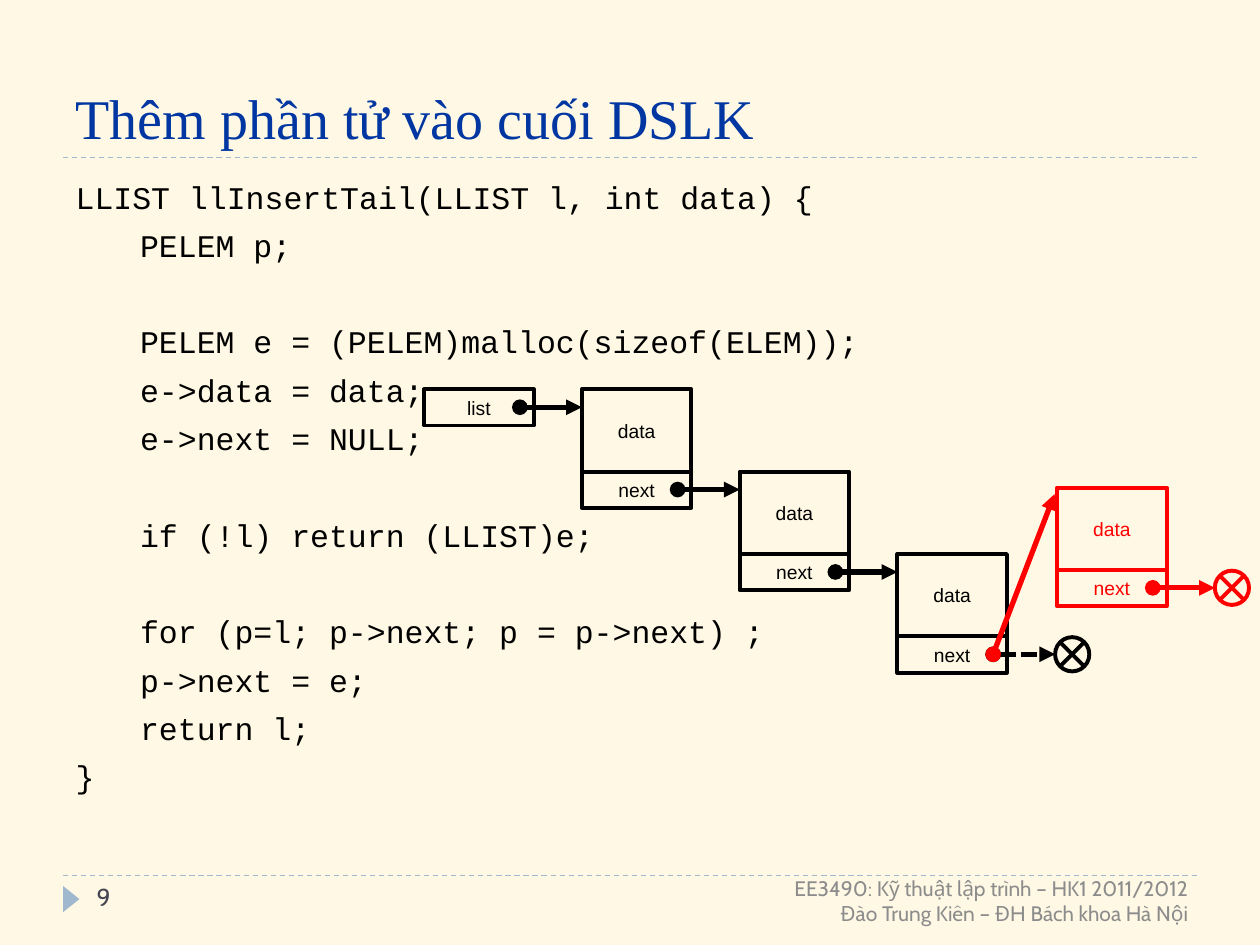
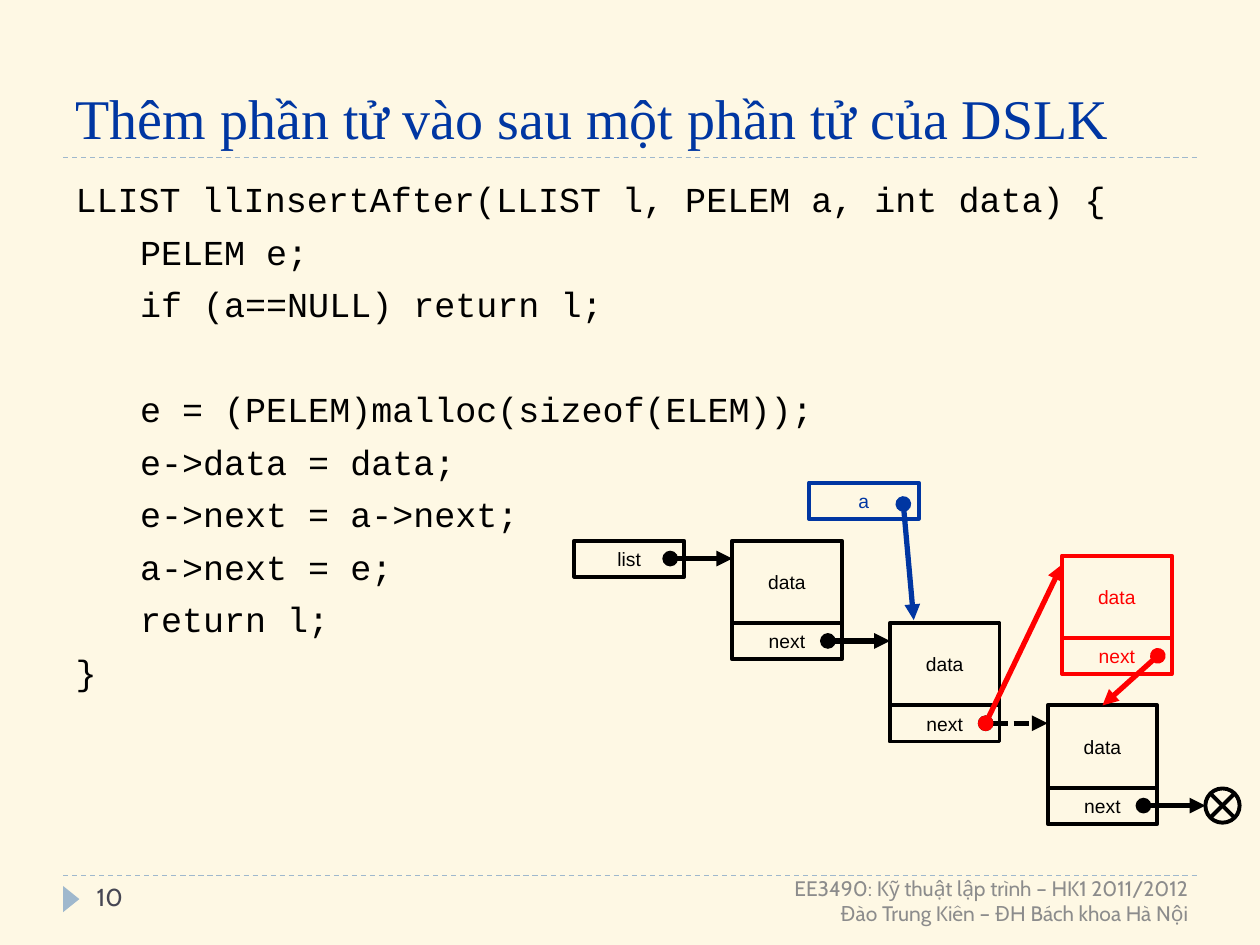
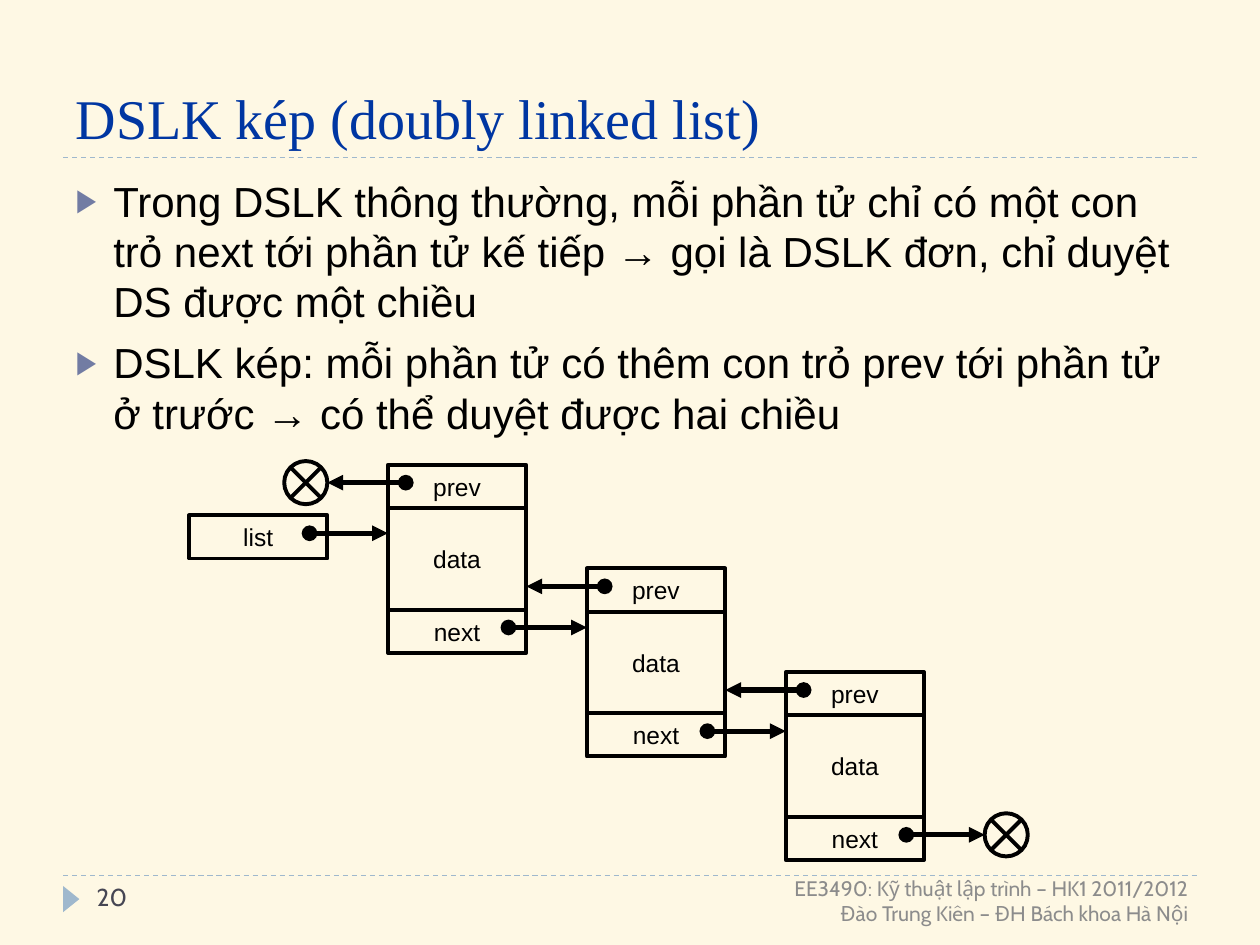
from dataclasses import dataclass

from pptx import Presentation
from pptx.dml.color import RGBColor
from pptx.enum.dml import MSO_LINE
from pptx.enum.shapes import MSO_CONNECTOR, MSO_SHAPE as Shape
from pptx.enum.text import MSO_ANCHOR as Anchor, MSO_AUTO_SIZE as AutoSize, PP_ALIGN as Align
from pptx.oxml.ns import qn
from pptx.util import Cm, Pt
from lxml.etree import SubElement

CREAM, BLUE, PALE_BLUE, BULLET = "FEF8E4", "0036A2", "9FB8CD", "727CA3"
BLACK, RED, NUMBER_GRAY, FOOTER_GRAY = "000000", "FF0000", "464653", "8C8C8C"

TITLE_AREA = (1.27, 0.43, 22.86, 2.74)
BODY_AREA = (1.27, 3.38, 22.86, 13.72)
NUMBER_AREA = (1.7, 17.65, 5.51, 1.02)
FOOTER_AREA = (8.69, 17.65, 15.52, 1.02)
RULE_LEFT, RULE_RIGHT, RULE_HEIGHTS = 1.27, 24.13, (17.65, 3.18)
PARAGRAPH_GAP, LINE_RATIO, CODE_INDENT, BULLET_INDENT = 6, 1.2, 1.3, 0.76
DOT_DEPTH = 0.36

FOOTER = ["EE3490: Kỹ thuật lập trình – HK1 2011/2012",
          "Đào Trung Kiên – ĐH Bách khoa Hà Nội"]

INSERT_TAIL = """LLIST llInsertTail(LLIST l, int data) {
    PELEM p;

    PELEM e = (PELEM)malloc(sizeof(ELEM));
    e->data = data;
    e->next = NULL;

    if (!l) return (LLIST)e;

    for (p=l; p->next; p = p->next) ;
    p->next = e;
    return l;
}"""

INSERT_AFTER = """LLIST llInsertAfter(LLIST l, PELEM a, int data) {
    PELEM e;
    if (a==NULL) return l;

    e = (PELEM)malloc(sizeof(ELEM));
    e->data = data;
    e->next = a->next;
    a->next = e;
    return l;
}"""

DOUBLY_LINKED = [
    "Trong DSLK thông thường, mỗi phần tử chỉ có một con trỏ next tới phần tử kế tiếp "
    "→ gọi là DSLK đơn, chỉ duyệt DS được một chiều",
    "DSLK kép: mỗi phần tử có thêm con trỏ prev tới phần tử ở trước "
    "→ có thể duyệt được hai chiều",
]


@dataclass
class NodeStyle:
    """Sizes of a list node and the steps between nodes, in centimetres."""
    width: float
    data_height: float
    link_height: float
    step_x: float
    step_y: float
    dot_inset: float
    null_size: float
    text_size: int


SINGLE = NodeStyle(2.21, 1.66, 0.73, 3.18, 1.66, 0.28, 0.69, 11)
DOUBLE = NodeStyle(2.79, 2.05, 0.87, 4.01, 2.09, 0.36, 0.87, 14)


def color(hex_value):
    return RGBColor.from_string(hex_value)


def place(shape, area):
    shape.left, shape.top, shape.width, shape.height = map(Cm, area)


def format_runs(paragraph, font_name, size, hex_value):
    for run in paragraph.runs:
        run.font.name, run.font.size = font_name, Pt(size)
        run.font.color.rgb = color(hex_value)


def write_lines(frame, lines, font_name, size, hex_value, align=Align.LEFT):
    frame.word_wrap = True
    frame.text = "\n".join(lines)
    for paragraph in frame.paragraphs:
        paragraph.alignment = align
        format_runs(paragraph, font_name, size, hex_value)


def set_indent(paragraph, margin, first_line):
    properties = paragraph._p.get_or_add_pPr()
    properties.set("marL", str(Cm(margin)))
    properties.set("indent", str(Cm(first_line)))
    return properties


def add_line(slide, start, end, hex_value, width, dash=None):
    line = slide.shapes.add_connector(MSO_CONNECTOR.STRAIGHT, *map(Cm, (*start, *end)))
    line.line.color.rgb = color(hex_value)
    line.line.width = Pt(width)
    if dash:
        line.line.dash_style = dash
    SubElement(line._element.spPr, qn("a:effectLst"))
    return line


def add_pointer(slide, start, end, hex_value=BLACK, dash=None):
    """Draw an arrow that starts with a dot."""
    pointer = add_line(slide, start, end, hex_value, 3, dash)
    outline = pointer._element.spPr.find(qn("a:ln"))
    SubElement(outline, qn("a:headEnd"), type="oval")
    SubElement(outline, qn("a:tailEnd"), type="triangle")
    return pointer


def add_outline(slide, kind, area, hex_value):
    shape = slide.shapes.add_shape(kind, *map(Cm, area))
    shape.shadow.inherit = False
    shape.fill.background()
    shape.line.color.rgb = color(hex_value)
    shape.line.width = Pt(2.25)
    return shape


def add_cell(slide, label, area, style, hex_value=BLACK):
    cell = add_outline(slide, Shape.RECTANGLE, area, hex_value)
    frame = cell.text_frame
    frame.margin_left = frame.margin_right = frame.margin_top = frame.margin_bottom = 0
    frame.vertical_anchor = Anchor.MIDDLE
    write_lines(frame, [label], "Arial", style.text_size, hex_value, Align.CENTER)
    return cell


def add_null(slide, left, middle, style, hex_value=BLACK):
    size = style.null_size
    add_outline(slide, Shape.FLOWCHART_SUMMING_JUNCTION,
                (left, middle - size / 2, size, size), hex_value)


def add_node(slide, left, top, style, hex_value=BLACK):
    """Draw a data cell above a next cell; return the data cell and the dot position."""
    link_top = top + style.data_height
    data = add_cell(slide, "data", (left, top, style.width, style.data_height), style, hex_value)
    add_cell(slide, "next", (left, link_top, style.width, style.link_height), style, hex_value)
    return data, (left + style.width - style.dot_inset, link_top + DOT_DEPTH)


def add_list(slide, left, top, style, head_drop=0, dashed=None, null_end=True):
    """Draw the list head and three nodes in steps; return each (data cell, dot)."""
    head_left, head_top = left - style.step_x, top + head_drop
    add_cell(slide, "list", (head_left, head_top, style.width, style.link_height), style)
    head_y = head_top + DOT_DEPTH
    add_pointer(slide, (left - style.step_x + style.width - style.dot_inset, head_y),
                (left, head_y))
    nodes = []
    for index in range(3):
        node_left = left + index * style.step_x
        data, dot = add_node(slide, node_left, top + index * style.step_y, style)
        dash = MSO_LINE.SQUARE_DOT if index == dashed else None
        add_pointer(slide, dot, (node_left + style.step_x, dot[1]), dash=dash)
        nodes.append((data, dot))
    if null_end:
        add_null(slide, left + 3 * style.step_x, nodes[-1][1][1], style)
    return nodes


def draw_insert_tail(slide):
    nodes = add_list(slide, 11.73, 7.85, SINGLE, dashed=2)
    new_left, new_top = 21.31, 9.83
    _, new_dot = add_node(slide, new_left, new_top, SINGLE, RED)
    null_left = new_left + SINGLE.step_x
    add_pointer(slide, new_dot, (null_left, new_dot[1]), RED)
    add_null(slide, null_left, new_dot[1], SINGLE, RED)
    add_pointer(slide, nodes[2][1], (new_left - 0.05, new_top + 0.13), RED)


def draw_insert_after(slide):
    nodes = add_list(slide, 14.76, 10.9, SINGLE, dashed=1)
    add_cell(slide, "a", (16.31, 9.73, SINGLE.width, SINGLE.link_height), SINGLE, BLUE)
    add_pointer(slide, (18.21, 10.16), (18.42, 12.5), BLUE)
    new_left, new_top = 21.41, 11.2
    _, new_dot = add_node(slide, new_left, new_top, SINGLE, RED)
    to_next = add_pointer(slide, new_dot, (22.23, 14.17), RED)
    to_next.end_connect(nodes[2][0], 0)
    add_pointer(slide, nodes[1][1], (new_left, new_top + 0.18), RED)


def draw_doubly_linked(slide):
    left, top = 7.82, 10.24
    style = DOUBLE
    add_list(slide, left, top, style, head_drop=0.15)
    gap = style.step_x - style.width
    for index in range(3):
        node_left = left + index * style.step_x
        prev_top = top + index * style.step_y - style.link_height
        add_cell(slide, "prev", (node_left, prev_top, style.width, style.link_height), style)
        prev_y = prev_top + DOT_DEPTH
        add_pointer(slide, (node_left + style.dot_inset, prev_y), (node_left - gap, prev_y))
    add_null(slide, left - gap - style.null_size,
             top - style.link_height + DOT_DEPTH, style)


def write_code(frame, code, size):
    """Write code lines; an empty line becomes extra space before the next one."""
    lines = code.split("\n")
    frame.margin_top = Cm(0.2)
    write_lines(frame, [line.strip() for line in lines if line], "Courier New", size, BLACK)
    paragraphs = iter(frame.paragraphs)
    line_height = size * LINE_RATIO
    space = 0
    for line in lines:
        if not line:
            space += line_height + PARAGRAPH_GAP
            continue
        paragraph = next(paragraphs)
        properties = set_indent(paragraph, 0, CODE_INDENT if line.startswith(" ") else 0)
        SubElement(properties, qn("a:buNone"))
        paragraph.line_spacing = Pt(line_height)
        paragraph.space_before = Pt(space)
        space = PARAGRAPH_GAP


def write_bullets(frame, items, size):
    frame.margin_top = Cm(0.15)
    write_lines(frame, items, "Arial", size, BLACK)
    for index, paragraph in enumerate(frame.paragraphs):
        properties = set_indent(paragraph, BULLET_INDENT, -BULLET_INDENT)
        bullet_color = SubElement(properties, qn("a:buClr"))
        SubElement(bullet_color, qn("a:srgbClr"), val=BULLET)
        SubElement(properties, qn("a:buSzPct"), val="76000")
        SubElement(properties, qn("a:buFont"), typeface="Arial")
        SubElement(properties, qn("a:buChar"), char="▶")
        paragraph.line_spacing = Pt(size * LINE_RATIO)
        paragraph.space_before = Pt(PARAGRAPH_GAP if index else 0)


def add_text(slide, area, lines, size, hex_value, align, anchor):
    frame = slide.shapes.add_textbox(*map(Cm, area)).text_frame
    frame.vertical_anchor = anchor
    write_lines(frame, lines, "Cabin", size, hex_value, align)


def add_frame_marks(slide, number):
    """Draw the rules, the page marker, the page number and the footer."""
    for height in RULE_HEIGHTS:
        add_line(slide, (RULE_LEFT, height), (RULE_RIGHT, height), PALE_BLUE, 0.75, MSO_LINE.DASH)
    marker = slide.shapes.add_shape(Shape.ISOSCELES_TRIANGLE, *map(Cm, (1.17, 17.96, 0.53, 0.33)))
    marker.rotation = 90
    marker.shadow.inherit = False
    marker.fill.solid()
    marker.fill.fore_color.rgb = color(PALE_BLUE)
    marker.line.fill.background()
    add_text(slide, NUMBER_AREA, [str(number)], 14, NUMBER_GRAY, Align.LEFT, Anchor.TOP)
    add_text(slide, FOOTER_AREA, FOOTER, 12, FOOTER_GRAY, Align.RIGHT, Anchor.MIDDLE)


SLIDES = [
    (9, "Thêm phần tử vào cuối DSLK", write_code, INSERT_TAIL, 18, draw_insert_tail),
    (10, "Thêm phần tử vào sau một phần tử của DSLK", write_code, INSERT_AFTER, 20,
     draw_insert_after),
    (20, "DSLK kép (doubly linked list)", write_bullets, DOUBLY_LINKED, 24, draw_doubly_linked),
]


def main():
    presentation = Presentation()
    presentation.slide_width, presentation.slide_height = Cm(25.4), Cm(19.05)
    background = presentation.slide_master.background.fill
    background.solid()
    background.fore_color.rgb = color(CREAM)
    layout = presentation.slide_layouts[1]

    for number, title_text, write_body, content, size, draw_diagram in SLIDES:
        slide = presentation.slides.add_slide(layout)
        title, body = slide.shapes.title, slide.placeholders[1]
        place(title, TITLE_AREA)
        title.text_frame.vertical_anchor = Anchor.BOTTOM
        write_lines(title.text_frame, [title_text], "Times New Roman", 32, BLUE)
        place(body, BODY_AREA)
        write_body(body.text_frame, content, size)
        for placeholder in (title, body):
            placeholder.text_frame.auto_size = AutoSize.NONE
        add_frame_marks(slide, number)
        draw_diagram(slide)

    presentation.save("out.pptx")


if __name__ == "__main__":
    main()
